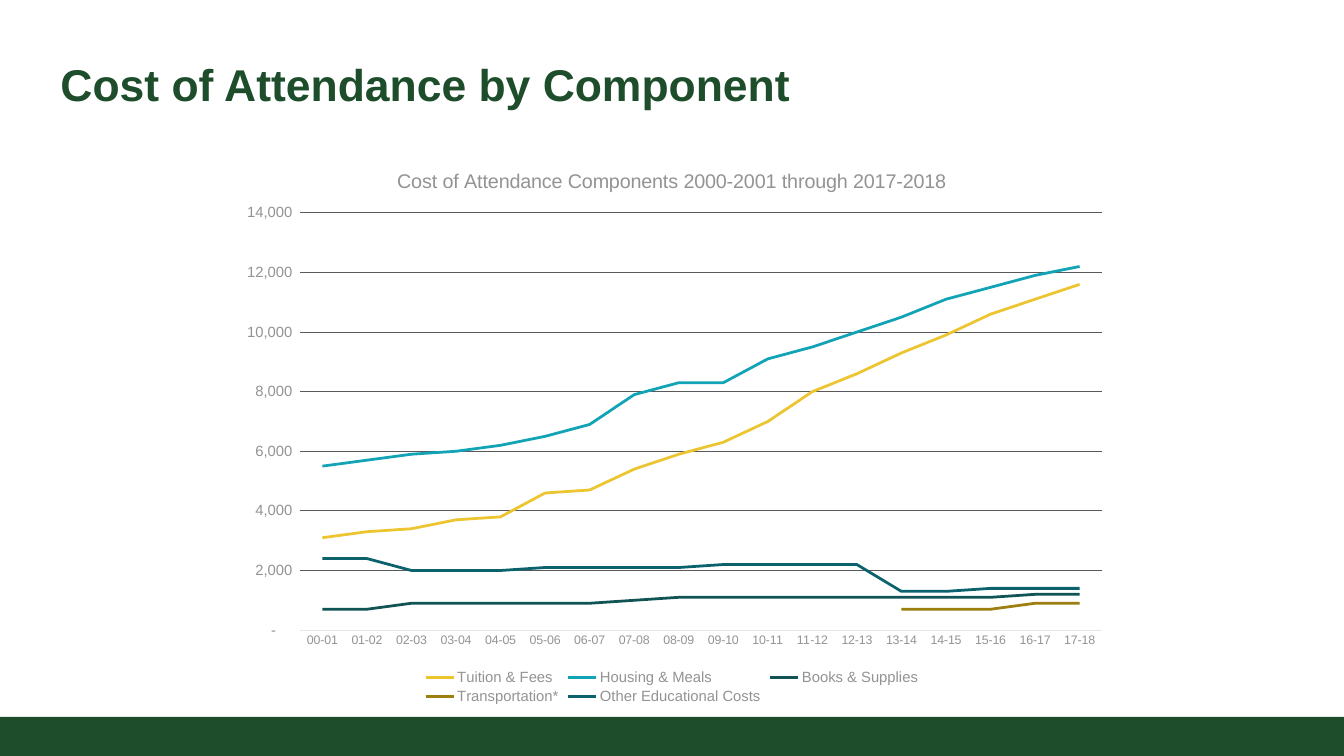
from lxml import etree
from pptx import Presentation
from pptx import util as u
from pptx.chart.data import CategoryChartData
from pptx.dml.color import RGBColor
from pptx.enum import chart as ch, shapes, text
from pptx.oxml.ns import qn

# Content
HEADLINE = "Cost of Attendance by Component"
CHART_TITLE = "Cost of Attendance Components 2000-2001 through 2017-2018"
YEARS = [f"{y:02}-{y + 1:02}" for y in range(18)]
COSTS = {
    "Tuition & Fees": [3100, 3300, 3400, 3700, 3800, 4600, 4700, 5400, 5900,
                       6300, 7000, 8000, 8600, 9300, 9900, 10600, 11100, 11600],
    "Housing & Meals": [5500, 5700, 5900, 6000, 6200, 6500, 6900, 7900, 8300,
                        8300, 9100, 9500, 10000, 10500, 11100, 11500, 11900, 12200],
    "Books & Supplies": [700] * 2 + [900] * 5 + [1000] + [1100] * 8 + [1200] * 2,
    "Transportation*": [None] * 13 + [700] * 3 + [900] * 2,
    "Other Educational Costs": [2400] * 2 + [2000] * 3 + [2100] * 4 + [2200] * 4
                               + [1300] * 2 + [1400] * 3,
}
NUMBER_FORMAT = r'_(* #,##0_);_(* \(#,##0\);_(* "-"??_);_(@_)'

# Theme and geometry
THEME = {
    "font": "Arial", "green": "1E4D2B", "label": "939395",
    "grid": "59595B", "axis": "E6E6E7",
    "lines": ["ECC530", "12A3B6", "105456", "9C7F0E", "0B626D"],
    "headline": 36, "chart_title": 16, "value": 12, "year": 10,
    "line": 2.25, "hairline": 0.75,
}
WIDTH, HEIGHT = u.Inches(15.11), u.Inches(8.5)
BAR_TOP = 8.06
HEADLINE_BOX = (0.58, 0.53, 13.74, 0.81)
CHART_BOX = (2.53, 1.67, 10.05, 6.29)
PLOT_SHARES = {"x": 0.084, "y": 0.115, "w": 0.897, "h": 0.746}


def rgb(name):
    return RGBColor.from_string(THEME.get(name, name))


def style(font, size, color="label", bold=False):
    font.name, font.size, font.bold = THEME["font"], u.Pt(THEME[size]), bold
    font.color.rgb = rgb(color)


def write(frame, words, **look):
    frame.text = words
    paragraph = frame.paragraphs[0]
    style(paragraph.runs[0].font, **look)
    return paragraph


def stroke(line, color, width):
    line.color.rgb = rgb(color)
    line.width = u.Pt(THEME[width])


def place_plot(chart):
    """Fix the inner plot area as shares of the chart's size."""
    plot_area = chart._chartSpace.chart.plotArea
    for old in plot_area.findall(qn("c:layout")):
        plot_area.remove(old)
    layout = etree.Element(qn("c:layout"))
    manual = etree.SubElement(layout, qn("c:manualLayout"))
    settings = {"layoutTarget": "inner", "xMode": "edge", "yMode": "edge", **PLOT_SHARES}
    for tag, value in settings.items():
        etree.SubElement(manual, qn(f"c:{tag}")).set("val", str(value))
    plot_area.insert(0, layout)


def add_cost_chart(slide):
    data = CategoryChartData(number_format=NUMBER_FORMAT)
    data.categories = YEARS
    for component, costs in COSTS.items():
        data.add_series(component, costs)
    chart = slide.shapes.add_chart(
        ch.XL_CHART_TYPE.LINE, *map(u.Inches, CHART_BOX), data).chart
    style(chart.font, "year", "grid")
    place_plot(chart)

    # Chart title and legend
    chart.has_title = True
    write(chart.chart_title.text_frame, CHART_TITLE, size="chart_title")
    chart.has_legend = True
    chart.legend.position = ch.XL_LEGEND_POSITION.BOTTOM
    chart.legend.include_in_layout = False
    style(chart.legend.font, "value")

    # Axes
    years, dollars = chart.category_axis, chart.value_axis
    for axis, size in ((years, "year"), (dollars, "value")):
        axis.major_tick_mark = axis.minor_tick_mark = ch.XL_TICK_MARK.NONE
        style(axis.tick_labels.font, size)
    stroke(years.format.line, "axis", "hairline")
    dollars.format.line.fill.background()
    dollars.minimum_scale, dollars.maximum_scale = 0, 14000
    dollars.major_unit = 2000
    dollars.tick_labels.number_format = NUMBER_FORMAT
    dollars.tick_labels.number_format_is_linked = False
    dollars.has_major_gridlines = True
    stroke(dollars.major_gridlines.format.line, "grid", "hairline")

    # Component lines
    chart.plots[0].vary_by_categories = False
    for component, color in zip(chart.plots[0].series, THEME["lines"]):
        component.smooth = False
        component.marker.style = ch.XL_MARKER_STYLE.NONE
        stroke(component.format.line, color, "line")


def main():
    prs = Presentation()
    prs.slide_width, prs.slide_height = WIDTH, HEIGHT
    slide = prs.slides.add_slide(prs.slide_layouts[5])

    # Footer bar
    top = u.Inches(BAR_TOP)
    bar = slide.shapes.add_shape(
        shapes.MSO_SHAPE.RECTANGLE, 0, top, WIDTH, HEIGHT - top)
    bar.shadow.inherit = False
    bar.fill.solid()
    bar.fill.fore_color.rgb = rgb("green")
    bar.line.fill.background()

    # Headline
    headline = slide.shapes.title
    headline.left, headline.top, headline.width, headline.height = map(
        u.Inches, HEADLINE_BOX)
    frame = headline.text_frame
    frame.margin_left = frame.margin_right = u.Inches(0.1)
    frame.margin_top = frame.margin_bottom = u.Inches(0.1)
    frame.vertical_anchor = text.MSO_ANCHOR.BOTTOM
    frame.word_wrap = True
    write(frame, HEADLINE, size="headline", color="green",
          bold=True).alignment = text.PP_ALIGN.LEFT

    add_cost_chart(slide)
    prs.save("out.pptx")


if __name__ == "__main__":
    main()
